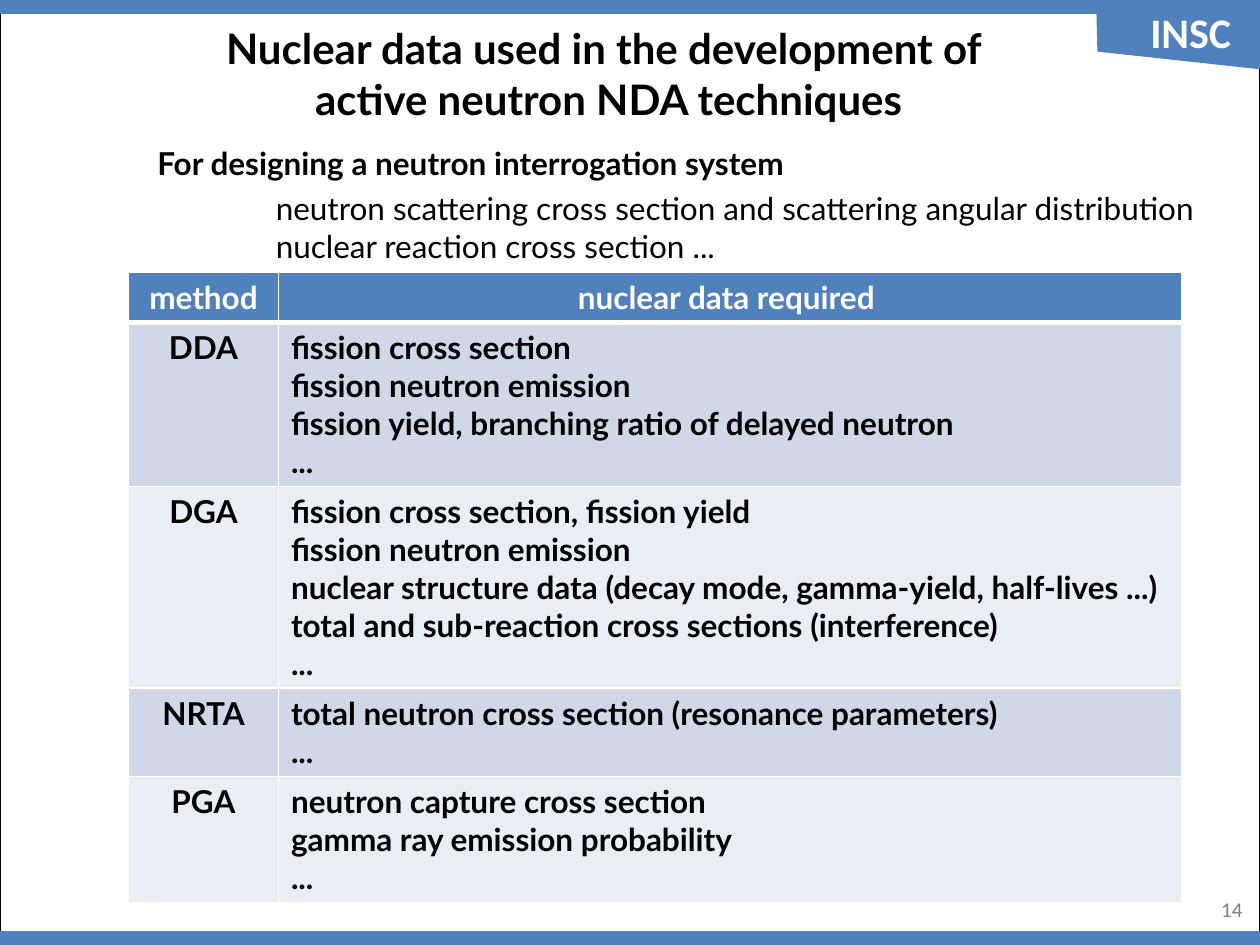
from dataclasses import dataclass

from lxml import etree
from pptx import Presentation
from pptx.dml.color import RGBColor
from pptx.enum.shapes import MSO_SHAPE
from pptx.enum.text import MSO_ANCHOR, MSO_AUTO_SIZE, PP_ALIGN
from pptx.oxml.ns import qn
from pptx.util import Inches, Pt

LEFT, CENTER, RIGHT = PP_ALIGN.LEFT, PP_ALIGN.CENTER, PP_ALIGN.RIGHT
TOP, NO_FIT = MSO_ANCHOR.TOP, MSO_AUTO_SIZE.NONE
RECTANGLE = MSO_SHAPE.RECTANGLE

COLORS = {
    "blue": "4F81BD",
    "dark_band": "D0D8E8",
    "light_band": "E9EDF4",
    "white": "FFFFFF",
    "black": "000000",
    "gray": "808080",
}


@dataclass
class Style:
    size: float = 18
    color: str = "black"
    bold: bool = False
    font: str = "Lato"
    align: PP_ALIGN = LEFT


@dataclass
class Label:
    left: float
    top: float
    width: float
    height: float
    lines: list[str]
    style: Style
    wrap: bool = True


@dataclass
class Method:
    name: str
    data: list[str]


def rgb(name: str) -> RGBColor:
    return RGBColor.from_string(COLORS[name])


def write_lines(frame, lines: list[str], style: Style) -> None:
    for index, line in enumerate(lines):
        para = frame.paragraphs[0] if index == 0 else frame.add_paragraph()
        para.alignment = style.align
        span = para.add_run()
        span.text = line
        span.font.name = style.font
        span.font.size = Pt(style.size)
        span.font.bold = style.bold
        span.font.color.rgb = rgb(style.color)


def fill_label(box, label: Label) -> None:
    box.left, box.top = Inches(label.left), Inches(label.top)
    box.width, box.height = Inches(label.width), Inches(label.height)
    frame = box.text_frame
    frame.word_wrap = label.wrap
    frame.auto_size = NO_FIT
    frame.vertical_anchor = TOP
    write_lines(frame, label.lines, label.style)


def add_label(page, label: Label) -> None:
    fill_label(page.shapes.add_textbox(0, 0, 0, 0), label)


def paint_blue(shape) -> None:
    shape.shadow.inherit = False
    shape.fill.solid()
    shape.fill.fore_color.rgb = rgb("blue")
    shape.line.fill.background()


def add_frame(page) -> None:
    border = page.shapes.add_shape(RECTANGLE, 0, 0, Inches(10), Inches(7.5))
    border.shadow.inherit = False
    border.fill.background()
    border.line.color.rgb = rgb("black")
    border.line.width = Pt(0.5)
    for top in (0, 7.39):
        paint_blue(page.shapes.add_shape(
            RECTANGLE, 0, Inches(top), Inches(10), Inches(0.11)))
    builder = page.shapes.build_freeform(Inches(8.7), Inches(0.01))
    corners = [(10, 0.01), (10, 0.55), (8.71, 0.41)]
    builder.add_line_segments([(Inches(x), Inches(y)) for x, y in corners])
    paint_blue(builder.convert_to_shape())


def set_cell(cell, lines: list[str], style: Style, fill: str,
             top_line: float = 1, bottom_line: float = 1) -> None:
    properties = cell._tc.get_or_add_tcPr()
    widths = {"lnL": 1, "lnR": 1, "lnT": top_line, "lnB": bottom_line}
    for side, width in widths.items():
        line = etree.SubElement(properties, qn(f"a:{side}"), w=str(Pt(width)))
        solid = etree.SubElement(line, qn("a:solidFill"))
        etree.SubElement(solid, qn("a:srgbClr"), val=COLORS["white"])
    cell.fill.solid()
    cell.fill.fore_color.rgb = rgb(fill)
    write_lines(cell.text_frame, lines, style)


def add_method_table(page, methods: list[Method]) -> None:
    # Each row holds its lines of text plus the cell margins
    heights = [0.4] + [0.3 * len(method.data) + 0.1 for method in methods]
    table = page.shapes.add_table(
        len(heights), 2, Inches(1.02), Inches(2.16),
        Inches(8.36), Inches(sum(heights))).table
    for column, width in zip(table.columns, (1.19, 7.17)):
        column.width = Inches(width)
    for row, height in zip(table.rows, heights):
        row.height = Inches(height)

    header = Style(color="white", bold=True, align=CENTER)
    for column, text in enumerate(("method", "nuclear data required ")):
        set_cell(table.cell(0, column), [text], header, "blue", bottom_line=3)
    for row, method in enumerate(methods, start=1):
        band = "dark_band" if row % 2 else "light_band"
        top_line = 3 if row == 1 else 1
        set_cell(table.cell(row, 0), [method.name],
                 Style(bold=True, align=CENTER), band, top_line)
        set_cell(table.cell(row, 1), method.data,
                 Style(bold=True), band, top_line)


TITLE = Label(-0.18, 0.13, 10.02, 0.91,
              ["Nuclear data used in the development of ",
               "active neutron NDA techniques"],
              Style(24, bold=True, align=CENTER))
LABELS = [
    Label(8.94, 0, 1.02, 0.51, ["INSC"],
          Style(24, "white", True, "Calibri", CENTER)),
    Label(7.63, 7.07, 2.33, 0.4, ["14"],
          Style(12, "gray", font="Calibri", align=RIGHT)),
    Label(2.09, 1.45, 7.91, 0.71,
          ["neutron scattering cross section and scattering angular distribution",
           "nuclear reaction cross section ..."], Style()),
    Label(1.15, 1.09, 5.52, 0.4,
          ["For designing a neutron interrogation system"],
          Style(bold=True), wrap=False),
]
METHODS = [
    Method("DDA", ["fission cross section", "fission neutron emission",
                   "fission yield, branching ratio of delayed neutron", "..."]),
    Method("DGA", ["fission cross section, fission yield",
                   "fission neutron emission",
                   "nuclear structure data (decay mode, gamma-yield, half-lives ...)",
                   "total and sub-reaction cross sections (interference)", "..."]),
    Method("NRTA", ["total neutron cross section (resonance parameters)", "..."]),
    Method("PGA", ["neutron capture cross section",
                   "gamma ray emission probability", "..."]),
]


def main() -> None:
    deck = Presentation()
    deck.slide_width, deck.slide_height = Inches(10), Inches(7.5)
    page = deck.slides.add_slide(deck.slide_layouts[5])

    # Border, bands and corner ribbon
    add_frame(page)
    # Title and free text
    fill_label(page.shapes.title, TITLE)
    for label in LABELS:
        add_label(page, label)
    # Data needed by each method
    add_method_table(page, METHODS)

    deck.save("out.pptx")


if __name__ == "__main__":
    main()
